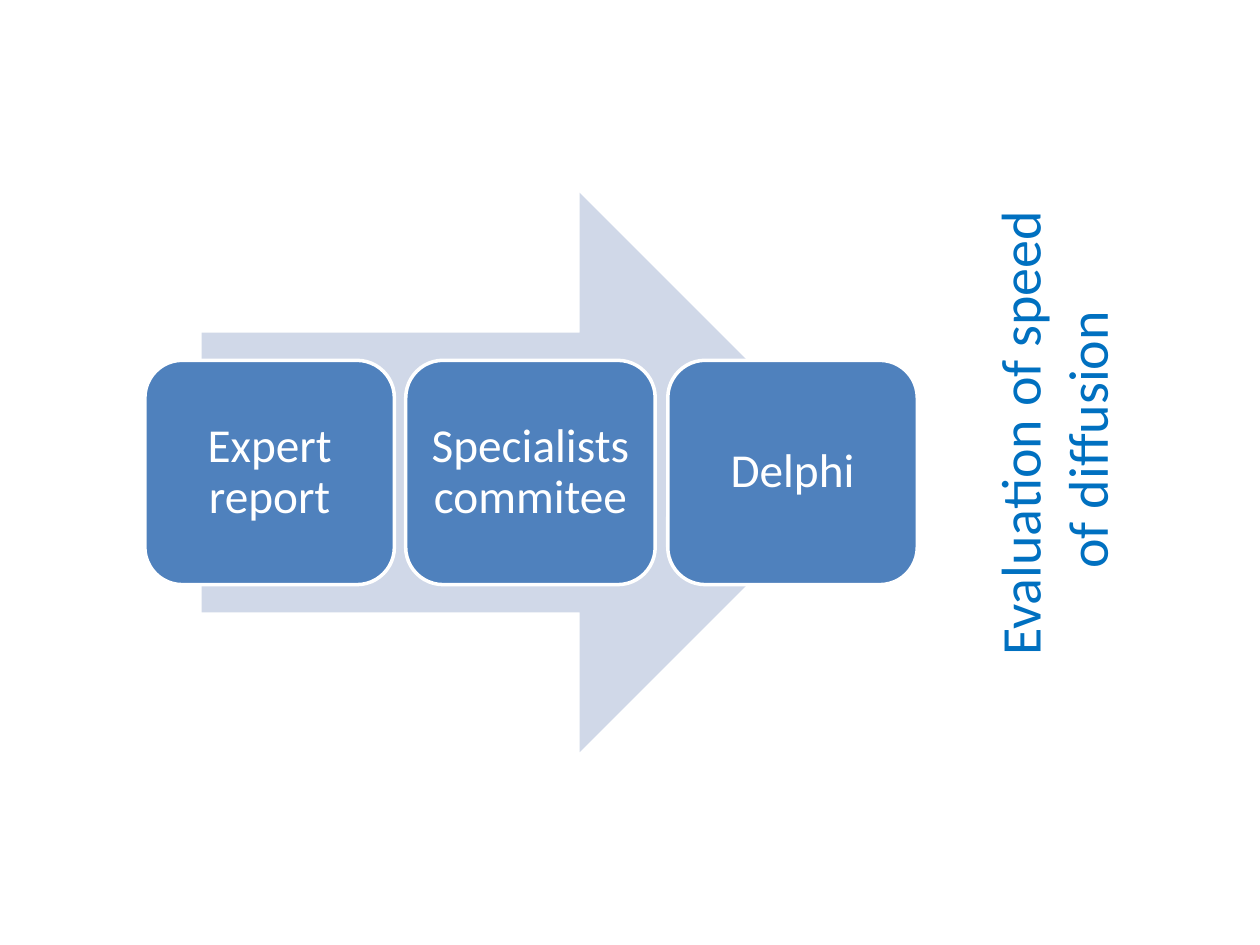
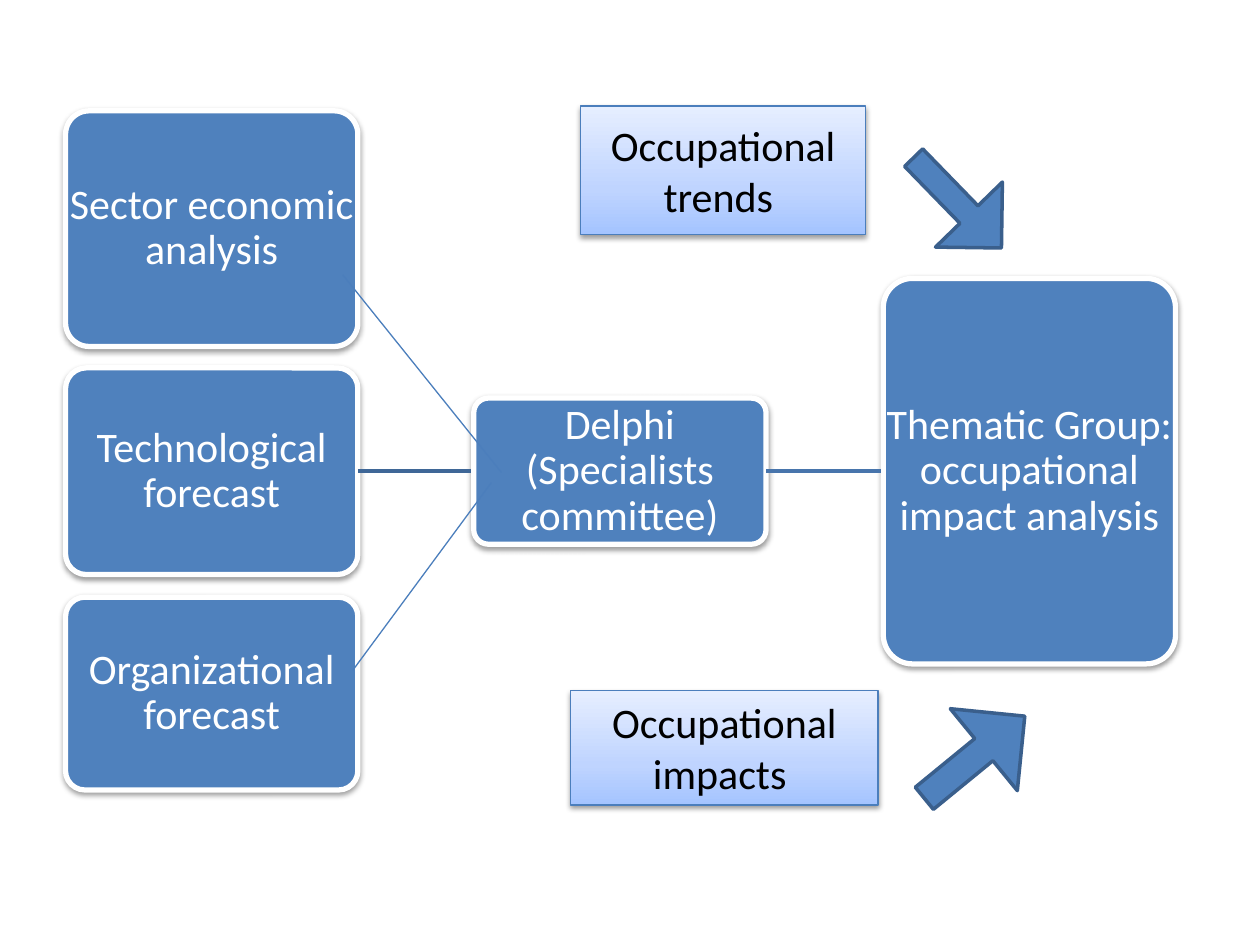
from lxml import etree
from pptx import Presentation
from pptx.dml.color import RGBColor
from pptx.enum.shapes import MSO_CONNECTOR, MSO_SHAPE
from pptx.enum.text import MSO_ANCHOR, MSO_AUTO_SIZE, PP_ALIGN
from pptx.oxml.ns import qn
from pptx.util import Pt

PX = 9144  # EMU in one px, at 100 px to the inch
FONT = "Calibri"
COLORS = {
    "white": "FFFFFF", "black": "000000", "title": "0070C0",
    "box": "4F81BD", "pale": "D0D8E8", "thin": "4B7EBC",
    "input_link": "3F6797", "output_link": "4875AC", "arrow_edge": "3A5F8C",
}
GRADIENT = ((0, "A4C4FF"), (35, "BFD4FF"), (100, "E6EEFF"))
BOX_TEXT = {
    "vertical_anchor": MSO_ANCHOR.MIDDLE, "margin_left": 2 * PX,
    "margin_right": 2 * PX, "margin_top": 2 * PX, "margin_bottom": 2 * PX,
}


def write(frame, text, size, color, spacing=1.0, **frame_format):
    """Put one centred paragraph into a text frame."""
    for name, value in frame_format.items():
        setattr(frame, name, value)
    frame.text = text
    paragraph = frame.paragraphs[0]
    paragraph.alignment = PP_ALIGN.CENTER
    paragraph.line_spacing = spacing
    for run in paragraph.runs:
        for name, value in {"name": FONT, "size": Pt(size), "bold": False}.items():
            setattr(run.font, name, value)
        run.font.color.rgb = RGBColor.from_string(COLORS[color])


def draw(slide, preset, place, fill=None, line=None, width=0, shadow=False):
    """Add a preset shape; without a fill colour it gets the pale gradient."""
    shape = slide.shapes.add_shape(preset, *(n * PX for n in place))
    if fill:
        shape.fill.solid()
        shape.fill.fore_color.rgb = RGBColor.from_string(COLORS[fill])
    else:
        shape.fill.gradient()
        shape.fill.gradient_angle = 90
        stops = shape.element.spPr.find(".//" + qn("a:gsLst"))
        for stop in list(stops):
            stops.remove(stop)
        for position, color in GRADIENT:
            stop = etree.SubElement(stops, qn("a:gs"), pos=str(position * 1000))
            etree.SubElement(stop, qn("a:srgbClr"), val=color)
    if line:
        shape.line.color.rgb = RGBColor.from_string(COLORS[line])
        shape.line.width = Pt(width)
    else:
        shape.line.fill.background()
    shape.shadow.inherit = False
    if shadow:
        effects = shape.element.spPr.find(qn("a:effectLst"))
        outer = etree.SubElement(effects, qn("a:outerShdw"), blurRad="40000",
                                 dist="20000", dir="5400000", rotWithShape="0")
        color = etree.SubElement(outer, qn("a:srgbClr"), val=COLORS["black"])
        etree.SubElement(color, qn("a:alpha"), val="38000")
    return shape


deck = Presentation()
deck.slide_width, deck.slide_height = 1000 * PX, 750 * PX
TITLE_ONLY, BLANK = deck.slide_layouts[5], deck.slide_layouts[6]

# Slide 1: steps along a wide arrow
diffusion = deck.slides.add_slide(TITLE_ONLY)
draw(diffusion, MSO_SHAPE.RIGHT_ARROW, (160, 153, 522, 444), "pale")
for i, step in enumerate(("Expert report", "Specialists commitee", "Delphi")):
    step_box = draw(diffusion, MSO_SHAPE.ROUNDED_RECTANGLE,
                    (115 + 415 * i // 2, 286, 198, 178), "box", "white", 2)
    write(step_box.text_frame, step, 27, "white", 0.9, word_wrap=True, **BOX_TEXT)

# Slide 1: title turned to read upwards
title = diffusion.shapes.title
title_place = {"left": 636, "top": 280, "width": 409, "height": 128}
for side, length in title_place.items():
    setattr(title, side, length * PX)
title.rotation = 270
write(title.text_frame, "Evaluation of speed of diffusion ", 32, "title",
      word_wrap=True, auto_size=MSO_AUTO_SIZE.NONE, vertical_anchor=MSO_ANCHOR.TOP)

# Slide 2: analysis boxes
impact = deck.slides.add_slide(BLANK)
ANALYSES = (
    ("Sector economic\vanalysis", 52, 88, 187),
    ("Technological\vforecast", 52, 292, 164),
    ("Organizational\vforecast", 52, 474, 153),
    ("Delphi\v(Specialists\vcommittee)", 376, 316, 116),
    ("Thematic Group:\voccupational\vimpact analysis", 701, 221, 306),
)
for label, left, top, height in ANALYSES:
    analysis = draw(impact, MSO_SHAPE.ROUNDED_RECTANGLE, (left, top, 232, height),
                    "box", "white", 3, shadow=True)
    analysis.adjustments[0] = 0.1
    write(analysis.text_frame, label, 24, "white", 0.9, word_wrap=False, **BOX_TEXT)

# Slide 2: links into and out of the Delphi box
LINKS = (
    ((284, 374, 374, 374), "input_link", 2),
    ((608, 374, 699, 374), "output_link", 2),
    ((272, 218, 398, 375), "thin", 0.75),
    ((280, 532, 390, 383), "thin", 0.75),
)
for ends, color, width in LINKS:
    link = impact.shapes.add_connector(MSO_CONNECTOR.STRAIGHT, *(n * PX for n in ends))
    link.line.color.rgb = RGBColor.from_string(COLORS[color])
    link.line.width = Pt(width)
    etree.SubElement(link.element.spPr, qn("a:effectLst"))

# Slide 2: occupational outcomes
OUTCOMES = (
    ("Occupational trends ", (461, 84, 226, 102), MSO_ANCHOR.MIDDLE),
    ("Occupational impacts ", (453, 548, 244, 91), MSO_ANCHOR.TOP),
)
for label, place, anchor in OUTCOMES:
    outcome = draw(impact, MSO_SHAPE.RECTANGLE, place, line="thin", width=0.75, shadow=True)
    write(outcome.text_frame, label, 24, "black", word_wrap=True, vertical_anchor=anchor)

# Slide 2: arrows pointing at the thematic group
for place, angle in (((710, 124, 100, 74), 45.8), ((722, 559, 103, 84), 320.7)):
    pointer = draw(impact, MSO_SHAPE.RIGHT_ARROW, place, "box", "arrow_edge", 2)
    pointer.rotation = angle
    pointer.adjustments[0] = 0.27

deck.save("out.pptx")
